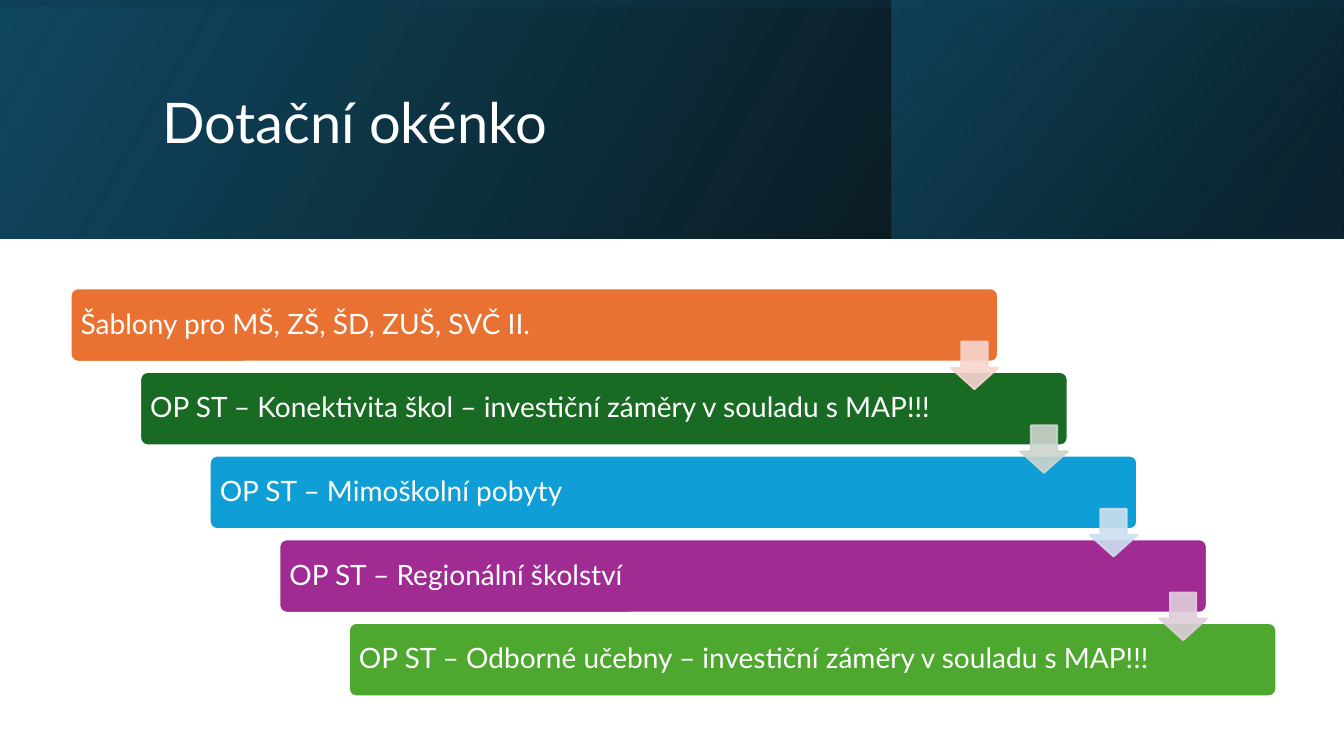
"""Build the grant overview slide: a title band above a staircase of programmes."""
import pptx
import pptx.util
import pptx.dml.color
import pptx.enum.shapes
import pptx.enum.text
import pptx.oxml
import pptx.oxml.ns
from pptx.util import Inches, Pt

TITLE = "Dotační okénko"
PROGRAMMES = [
    ("Šablony pro MŠ, ZŠ, ŠD, ZUŠ, SVČ II.", "orange", "peach", 8.33),
    ("OP ST – Konektivita škol – investiční záměry v souladu s MAP!!!", "forest", "sage", 8),
    ("OP ST – Mimoškolní pobyty", "sky", "ice", 8),
    ("OP ST – Regionální školství", "purple", "lilac", 8),
    ("OP ST – Odborné učebny – investiční záměry v souladu s MAP!!!", "green", None, 8),
]
COLOURS = {
    "white": "FFFFFF", "black": "000000", "navy": "104862", "deep": "0B3041", "teal": "156082",
    "orange": "E97132", "forest": "196B24", "sky": "0F9ED5", "purple": "A02B93", "green": "4EA72E",
    "peach": "F7D5CE", "sage": "CCD4CD", "ice": "CCDFEF", "lilac": "DFCDDC",
}
FONT = "Lato"
WIDTH, HEIGHT = 13.33, 7.5
BAND_HEIGHT = 2.37
BAND_LAYERS = [
    (0, WIDTH, 210, [(0, "black", 96), (100, "navy", 100)]),
    (8.84, 4.48, 220, [(19, "deep", 68), (100, "teal", 48)]),
    (0, WIDTH, 100, [(23, "navy", 16), (99, "black", 45)]),
]
STAIR_LEFT, STAIR_TOP = 0.7, 2.86
STEP_X, STEP_Y = 0.69, 0.83
BAR_WIDTH, BAR_HEIGHT = 9.2, 0.73
LABEL_INSET = 0.02
ARROW_SIZE, ARROW_DROP = 0.47, 0.53
SHAPES = pptx.enum.shapes.MSO_SHAPE


def rgb(name):
    return pptx.dml.color.RGBColor.from_string(COLOURS[name])


def add_panel(slide, kind, box, adjustments=()):
    panel = slide.shapes.add_shape(kind, *map(Inches, box))
    panel.shadow.inherit = False
    for index, value in enumerate(adjustments):
        panel.adjustments[index] = value
    return panel


def paint(panel, fill, line):
    panel.fill.solid()
    panel.fill.fore_color.rgb = rgb(fill)
    panel.line.color.rgb = rgb(line)
    panel.line.width = Pt(1.5)


def fade(panel, percent):
    for colour in panel._element.spPr.iter(pptx.oxml.ns.qn("a:srgbClr")):
        alpha = colour.makeelement(pptx.oxml.ns.qn("a:alpha"), {"val": str(percent * 1000)})
        colour.append(alpha)


def paint_gradient(panel, angle, stops):
    panel.line.fill.background()
    stop_xml = "".join(
        f'<a:gs pos="{place * 1000}"><a:srgbClr val="{COLOURS[name]}">'
        f'<a:alpha val="{opacity * 1000}"/></a:srgbClr></a:gs>'
        for place, name, opacity in stops
    )
    gradient = pptx.oxml.parse_xml(
        f'<a:gradFill {pptx.oxml.ns.nsdecls("a")} rotWithShape="1"><a:gsLst>{stop_xml}</a:gsLst>'
        f'<a:lin ang="{angle * 60000}" scaled="0"/></a:gradFill>'
    )
    panel._element.spPr.find(pptx.oxml.ns.qn("a:prstGeom")).addnext(gradient)


def add_text(slide, box, text, size, inset_x, inset_y):
    frame = slide.shapes.add_textbox(*map(Inches, box)).text_frame
    frame.word_wrap = True
    frame.vertical_anchor = pptx.enum.text.MSO_ANCHOR.MIDDLE
    frame.margin_left = frame.margin_right = Inches(inset_x)
    frame.margin_top = frame.margin_bottom = Inches(inset_y)
    paragraph = frame.paragraphs[0]
    paragraph.text = text
    paragraph.line_spacing = 0.9
    paragraph.font.name = FONT
    paragraph.font.size = Pt(size)
    paragraph.font.color.rgb = rgb("white")


def add_band(slide):
    for left, width, angle, stops in BAND_LAYERS:
        layer = add_panel(slide, SHAPES.RECTANGLE, (left, 0, width, BAND_HEIGHT))
        paint_gradient(layer, angle, stops)
    add_text(slide, (1.51, 0.38, 10.63, 1.72), TITLE, 40, 0.1, 0.05)


def add_staircase(slide):
    corners = [(STAIR_LEFT + i * STEP_X, STAIR_TOP + i * STEP_Y) for i in range(len(PROGRAMMES))]
    for (left, top), (label, fill, _, label_width) in zip(corners, PROGRAMMES):
        bar = add_panel(slide, SHAPES.ROUNDED_RECTANGLE, (left, top, BAR_WIDTH, BAR_HEIGHT), [0.1])
        paint(bar, fill, "white")
        label_box = (left + LABEL_INSET, top + LABEL_INSET, label_width, BAR_HEIGHT - 2 * LABEL_INSET)
        add_text(slide, label_box, label, 20, 0.08, 0.08)
    for (left, top), (_, _, tint, _) in zip(corners, PROGRAMMES):
        if tint:
            arrow_box = (left + BAR_WIDTH - ARROW_SIZE, top + ARROW_DROP, ARROW_SIZE, ARROW_SIZE)
            arrow = add_panel(slide, SHAPES.DOWN_ARROW, arrow_box, [0.55, 0.45])
            paint(arrow, tint, tint)
            fade(arrow, 90)


def main():
    deck = pptx.Presentation()
    deck.slide_width, deck.slide_height = Inches(WIDTH), Inches(HEIGHT)
    slide = deck.slides.add_slide(deck.slide_layouts[6])
    add_band(slide)
    add_staircase(slide)
    deck.save("out.pptx")


if __name__ == "__main__":
    main()
